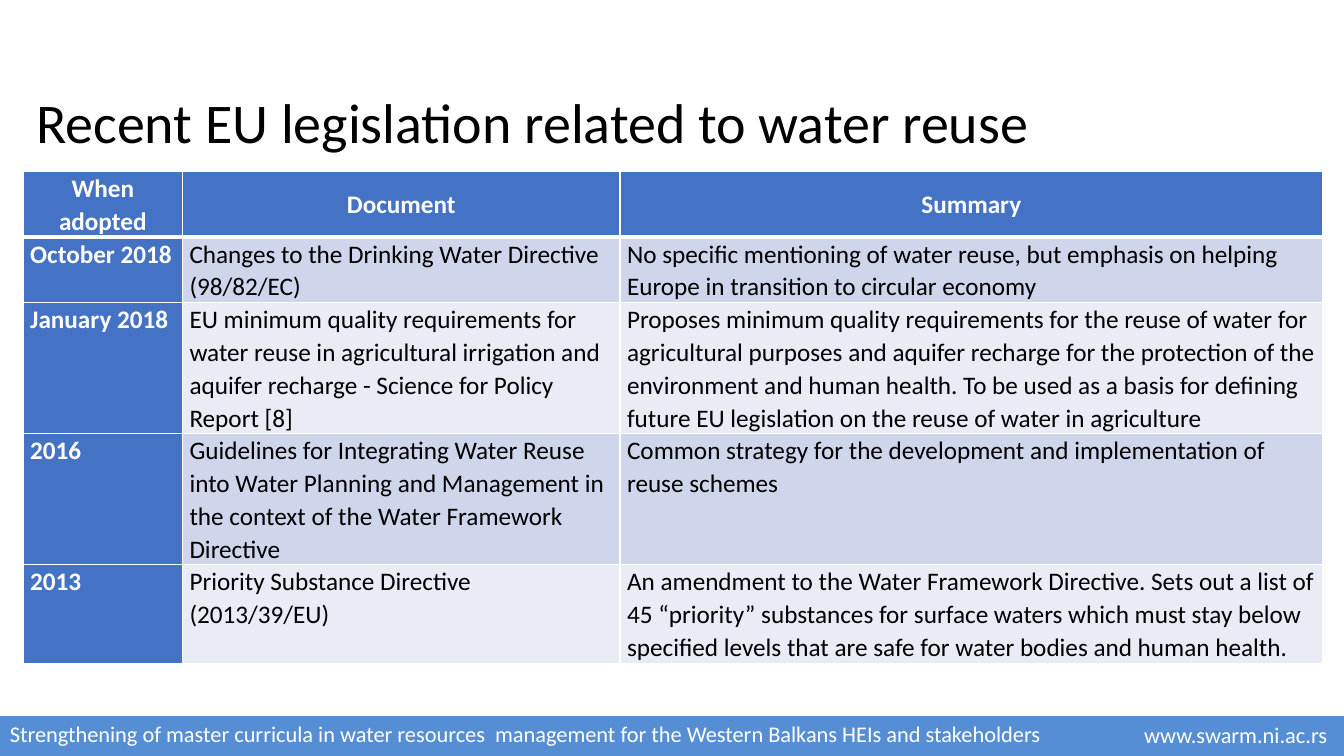
from dataclasses import dataclass

from lxml import etree
from pptx import Presentation
from pptx import util as u
from pptx.dml import color
from pptx.enum import shapes, text
from pptx.oxml import ns


@dataclass(frozen=True)
class Theme:
    """Colours, font and type sizes of the deck."""
    font: str = "Calibri"
    black: str = "000000"
    white: str = "FFFFFF"
    heading: str = "4472C4"
    band: str = "558ED5"
    stripes: tuple = ("CFD5EA", "E9EBF5")
    title_size: int = 40
    table_size: int = 18
    footer_size: int = 16


EMU_PER_PX = 9144
HEADER = ("When adopted", "Document", "Summary")
LEGISLATION = (
    ("October 2018",
     "Changes to the Drinking Water Directive (98/82/EC)",
     "No specific mentioning of water reuse, but emphasis on helping Europe "
     "in transition to circular economy"),
    ("January 2018",
     "EU minimum quality requirements for water reuse in agricultural "
     "irrigation and aquifer recharge - Science for Policy Report [8]",
     "Proposes minimum quality requirements for the reuse of water for "
     "agricultural purposes and aquifer recharge for the protection of the "
     "environment and human health. To be used as a basis for defining future "
     "EU legislation on the reuse of water in agriculture"),
    ("2016",
     "Guidelines for Integrating Water Reuse into Water Planning and "
     "Management in the context of the Water Framework Directive",
     "Common strategy for the development and implementation of reuse schemes"),
    ("2013",
     "Priority Substance Directive (2013/39/EU)",
     "An amendment to the Water Framework Directive. Sets out a list of 45 "
     "“priority” substances for surface waters which must stay below specified "
     "levels that are safe for water bodies and human health."),
)
COLUMN_WIDTHS = (158, 434, 697)
ROW_HEIGHTS = (65, 65, 130, 130, 98)


def px(*lengths):
    """Turn whole pixels into EMU."""
    return [u.Emu(length * EMU_PER_PX) for length in lengths]


class SlideBuilder:
    """Draws styled elements on the current page."""

    def __init__(self, deck, theme):
        """Open a title-only page in the deck."""
        self.theme = theme
        self.page = deck.slides.add_slide(deck.slide_layouts[5])

    def add_span(self, para, words, size, ink, bold=False):
        """Add one styled run to a paragraph."""
        span = para.add_run()
        span.text = words
        span.font.name = self.theme.font
        span.font.size = u.Pt(size)
        span.font.bold = bold
        span.font.color.rgb = color.RGBColor.from_string(ink)

    def title(self, words, *place):
        """Move and fill the title placeholder."""
        box = self.page.shapes.title
        box.left, box.top, box.width, box.height = px(*place)
        frame = box.text_frame
        frame.auto_size = text.MSO_AUTO_SIZE.NONE
        frame.vertical_anchor = text.MSO_ANCHOR.MIDDLE
        para = frame.paragraphs[0]
        para.alignment = text.PP_ALIGN.LEFT
        para.line_spacing = 0.9
        self.add_span(para, words, self.theme.title_size, self.theme.black)

    def band(self, *place):
        """Draw the plain footer band."""
        band = self.page.shapes.add_shape(
            shapes.MSO_SHAPE.FLOWCHART_PROCESS, *px(*place))
        band.shadow.inherit = False
        band.fill.solid()
        band.fill.fore_color.rgb = color.RGBColor.from_string(self.theme.band)
        band.line.fill.background()

    def footer(self, words, *place):
        """Place a line of footer text."""
        box = self.page.shapes.add_textbox(*px(*place))
        box.text_frame.word_wrap = True
        self.add_span(box.text_frame.paragraphs[0], words,
                      self.theme.footer_size, self.theme.white)

    def borders(self, cell, **widths):
        """Rule the cell's sides in white, given widths in points."""
        properties = cell._tc.get_or_add_tcPr()
        for position, side in enumerate(("L", "R", "T", "B")):
            line = etree.Element(ns.qn(f"a:ln{side}"),
                                 w=str(u.Pt(widths.get(side, 1))))
            fill = etree.SubElement(line, ns.qn("a:solidFill"))
            etree.SubElement(fill, ns.qn("a:srgbClr"), val=self.theme.white)
            properties.insert(position, line)

    def cell(self, cell, words, row, column):
        """Fill and style one table cell."""
        is_header = row == 0
        is_heading = is_header or column == 0
        theme = self.theme
        fill = theme.heading if is_heading else theme.stripes[(row - 1) % 2]
        cell.fill.solid()
        cell.fill.fore_color.rgb = color.RGBColor.from_string(fill)
        cell.margin_left, cell.margin_right = px(7, 7)
        cell.margin_top = cell.margin_bottom = 0
        para = cell.text_frame.paragraphs[0]
        para.line_spacing = 1.07
        if is_header:
            cell.vertical_anchor = text.MSO_ANCHOR.MIDDLE
            para.alignment = text.PP_ALIGN.CENTER
        self.add_span(para, words, theme.table_size,
                      theme.white if is_heading else theme.black, is_heading)
        self.borders(cell, B=3 if is_header else 1, T=3 if row == 1 else 1)

    def table(self, rows, widths, heights, left, top):
        """Lay out a table with a header row and a heading column."""
        place = px(left, top, sum(widths), sum(heights))
        table = self.page.shapes.add_table(
            len(rows), len(widths), *place).table
        table.first_col = True
        for column, width in zip(table.columns, px(*widths)):
            column.width = width
        for row, height in zip(table.rows, px(*heights)):
            row.height = height
        for row, entries in enumerate(rows):
            for column, words in enumerate(entries):
                self.cell(table.cell(row, column), words, row, column)


def main():
    """Build and save the slide."""
    deck = Presentation()
    deck.slide_width, deck.slide_height = px(1333, 750)
    builder = SlideBuilder(deck, Theme())
    builder.band(0, 710, 1333, 40)
    builder.footer("Strengthening of master curricula in water resources  "
                   "management for the Western Balkans HEIs and stakeholders",
                   0, 710, 1106, 37)
    builder.footer("www.swarm.ni.ac.rs", 1125, 711, 208, 37)
    builder.title("Recent EU legislation related to water reuse",
                  26, 88, 1288, 72)
    builder.table((HEADER, *LEGISLATION), COLUMN_WIDTHS, ROW_HEIGHTS, 23, 170)
    deck.save("out.pptx")


if __name__ == "__main__":
    main()
